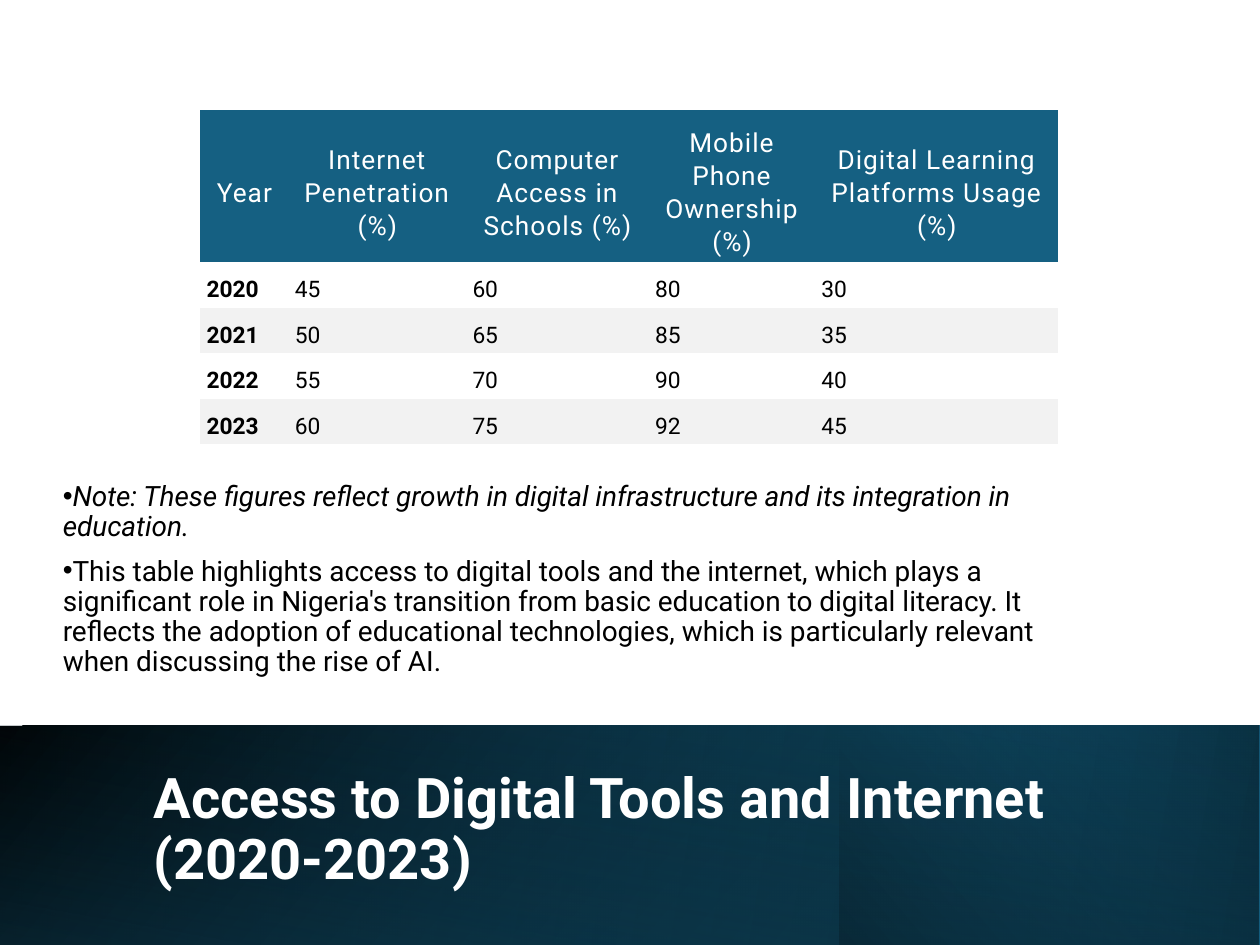
from dataclasses import dataclass
from typing import NamedTuple

from lxml.etree import SubElement
from pptx import Presentation
from pptx.dml.color import RGBColor
from pptx.enum.shapes import MSO_SHAPE
from pptx.enum.text import MSO_ANCHOR, MSO_AUTO_SIZE, PP_ALIGN
from pptx.oxml import parse_xml
from pptx.oxml.ns import nsdecls, qn
from pptx.util import Inches, Pt

GRID_STEP = 0.1  # inches; the slide is 100 columns by 75 rows


@dataclass(frozen=True)
class Theme:
    font: str = "Roboto"
    white: str = "FFFFFF"
    black: str = "000000"
    teal: str = "156082"
    navy: str = "0B3041"
    stripe: str = "F2F2F2"
    title_size: int = 32
    note_size: int = 16
    header_size: int = 15
    value_size: int = 13


THEME = Theme()


class Box(NamedTuple):
    column: float
    row: float
    columns: float
    rows: float

    def lengths(self) -> list[int]:
        return [grid(value) for value in self]


class Stop(NamedTuple):
    position: int
    color: str
    opacity: int = 100


class Band(NamedTuple):
    box: Box
    stops: tuple[Stop, ...]
    angle: int
    flipped: bool = True
    rotation: int = 0


class Note(NamedTuple):
    text: str
    italic: bool


BANDS = (
    Band(Box(0, 57.6, 100, 17.4), (Stop(0, THEME.black), Stop(100, THEME.teal)), 140),
    Band(Box(0, 57.6, 99.9, 17.4), (Stop(0, THEME.teal, 0), Stop(100, THEME.navy)), 170),
    Band(Box(66.6, 57.6, 33.4, 17.4), (Stop(0, THEME.navy), Stop(100, THEME.teal, 0)), 220),
    Band(Box(-0.1, 57.6, 100, 17.5), (Stop(0, THEME.black, 0), Stop(99, THEME.navy, 55)), 280,
         flipped=False, rotation=180),
)
TITLE = "Access to Digital Tools and Internet (2020-2023)"
TITLE_BOX = Box(11.2, 60.3, 81.2, 11.3)
NOTES = (
    Note("Note: These figures reflect growth in digital infrastructure and its "
         "integration in education.", True),
    Note("This table highlights access to digital tools and the internet, which plays a "
         "significant role in Nigeria's transition from basic education to digital literacy. "
         "It reflects the adoption of educational technologies, which is particularly "
         "relevant when discussing the rise of AI.", False),
)
NOTES_BOX = Box(4, 37.9, 84.8, 16.3)
HEADERS = ("Year", "Internet Penetration (%)", "Computer Access in Schools (%)",
           "Mobile Phone Ownership (%)", "Digital Learning Platforms Usage (%)")
ACCESS = ((2020, 45, 60, 80, 30), (2021, 50, 65, 85, 35),
          (2022, 55, 70, 90, 40), (2023, 60, 75, 92, 45))
TABLE_BOX = Box(15.9, 8.7, 68.2, 26.6)
COLUMN_WIDTHS = (7, 14.1, 14.5, 13.2, 19.3)
HEADER_HEIGHT, VALUE_HEIGHT = 12.1, 3.62
PLAIN_TABLE_STYLE = "{2D5ABB26-0587-4C30-8999-92F81FD0307C}"


def grid(units: float) -> int:
    return Inches(units * GRID_STEP)


def format_runs(paragraph, size: int, color: str, bold: bool = False,
                italic: bool = False) -> None:
    for run in paragraph.runs:
        run.font.name = THEME.font
        run.font.size = Pt(size)
        run.font.bold = bold
        run.font.italic = italic
        run.font.color.rgb = RGBColor.from_string(color)


def draw_band(slide, band: Band) -> None:
    shape = slide.shapes.add_shape(MSO_SHAPE.RECTANGLE, *band.box.lengths())
    shape.shadow.inherit = False
    shape.line.fill.background()
    shape.rotation = band.rotation
    properties = shape._element.spPr
    transform = properties.find(qn("a:xfrm"))
    if band.flipped:
        transform.set("flipH", "1")
    stops = "".join(
        f'<a:gs pos="{stop.position * 1000}"><a:srgbClr val="{stop.color}">'
        f'<a:alpha val="{stop.opacity * 1000}"/></a:srgbClr></a:gs>'
        for stop in band.stops)
    gradient = parse_xml(
        f'<a:gradFill {nsdecls("a")} rotWithShape="1"><a:gsLst>{stops}</a:gsLst>'
        f'<a:lin ang="{band.angle * 60000}" scaled="0"/></a:gradFill>')
    properties.find(qn("a:prstGeom")).addnext(gradient)


def place_title(slide) -> None:
    title = slide.shapes.title
    slide.shapes._spTree.append(title._element)  # in front of the bands
    title.left, title.top, title.width, title.height = TITLE_BOX.lengths()
    frame = title.text_frame
    frame.text = TITLE
    frame.auto_size = MSO_AUTO_SIZE.NONE
    frame.word_wrap = True
    frame.vertical_anchor = MSO_ANCHOR.MIDDLE
    heading = frame.paragraphs[0]
    heading.alignment = PP_ALIGN.LEFT
    heading.line_spacing = 0.9
    format_runs(heading, THEME.title_size, THEME.white, bold=True)


def draw_notes(slide) -> None:
    frame = slide.shapes.add_textbox(*NOTES_BOX.lengths()).text_frame
    frame.word_wrap = True
    frame.vertical_anchor = MSO_ANCHOR.MIDDLE
    for index, note in enumerate(NOTES):
        paragraph = frame.add_paragraph() if index else frame.paragraphs[0]
        paragraph.text = note.text
        paragraph.line_spacing = 0.9
        paragraph.space_after = Pt(8)
        format_runs(paragraph, THEME.note_size, THEME.black, italic=note.italic)
        properties = paragraph._p.get_or_add_pPr()
        properties.set("marL", "0")
        properties.set("indent", str(Inches(-0.25)))
        SubElement(properties, qn("a:buFont"), typeface="Arial")
        SubElement(properties, qn("a:buChar"), char="•")


def fill_cell(cell, text: str, row: int, column: int) -> None:
    is_header = row == 0
    cell.margin_left = cell.margin_right = Inches(0.05)
    cell.margin_top, cell.margin_bottom = Inches(0.1), 0
    if is_header or row % 2 == 0:
        cell.fill.solid()
        cell.fill.fore_color.rgb = RGBColor.from_string(
            THEME.teal if is_header else THEME.stripe)
    else:
        cell.fill.background()
    cell.text_frame.text = text
    paragraph = cell.text_frame.paragraphs[0]
    paragraph.line_spacing = 1.07
    paragraph.space_after = Pt(8)
    if is_header:
        cell.vertical_anchor = MSO_ANCHOR.MIDDLE
        paragraph.alignment = PP_ALIGN.CENTER
        format_runs(paragraph, THEME.header_size, THEME.white)
        paragraph.runs[0].font._element.set("spc", "60")
    else:
        format_runs(paragraph, THEME.value_size, THEME.black, bold=column == 0)


def draw_access_table(slide) -> None:
    records = (HEADERS, *ACCESS)
    table = slide.shapes.add_table(
        len(records), len(HEADERS), *TABLE_BOX.lengths()).table
    table.first_row = table.horz_banding = False
    table._tbl.tblPr.find(qn("a:tableStyleId")).text = PLAIN_TABLE_STYLE
    for column, width in zip(table.columns, COLUMN_WIDTHS):
        column.width = grid(width)
    for row, record in enumerate(records):
        table.rows[row].height = grid(VALUE_HEIGHT if row else HEADER_HEIGHT)
        for column, value in enumerate(record):
            fill_cell(table.cell(row, column), str(value), row, column)


def main() -> None:
    deck = Presentation()
    deck.slide_width, deck.slide_height = grid(100), grid(75)
    slide = deck.slides.add_slide(deck.slide_layouts[5])
    for band in BANDS:
        draw_band(slide, band)
    place_title(slide)
    draw_notes(slide)
    draw_access_table(slide)
    deck.save("out.pptx")


if __name__ == "__main__":
    main()
